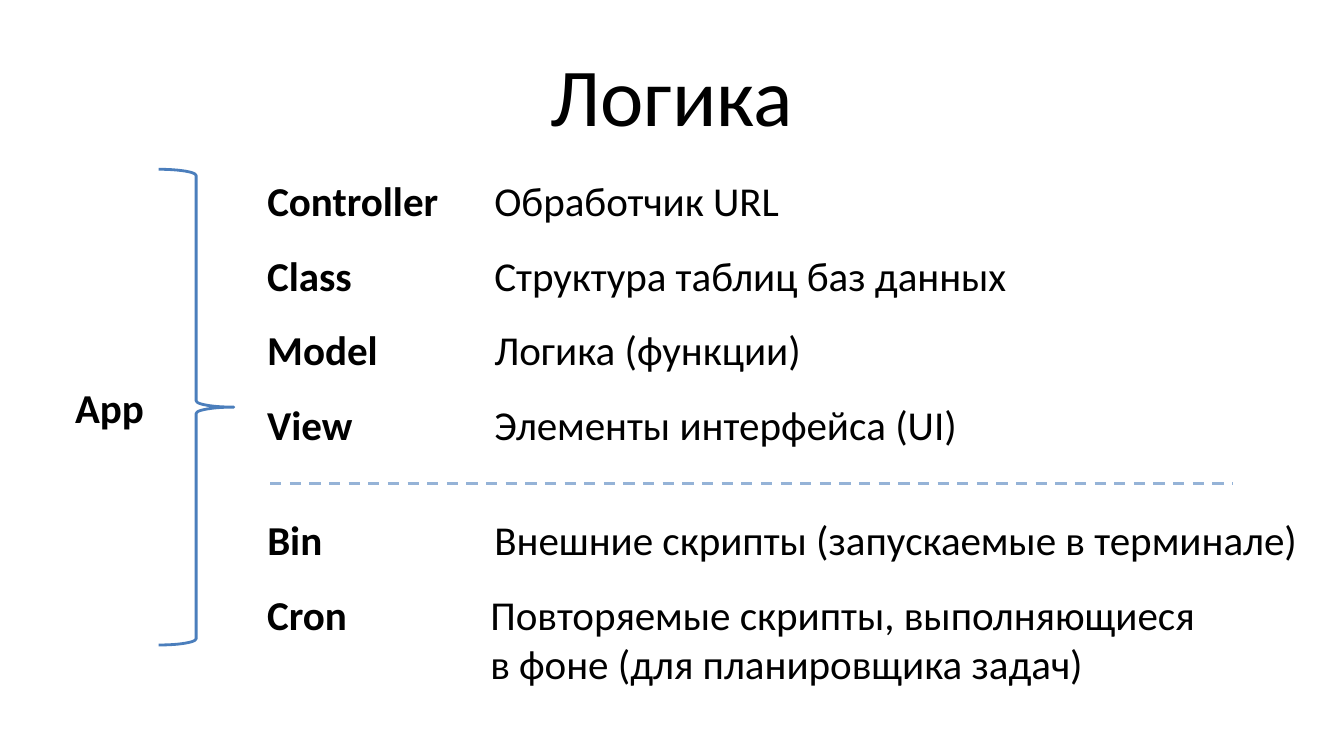
from pptx import Presentation
from pptx.dml.color import RGBColor
from pptx.enum.dml import MSO_LINE_DASH_STYLE as DASH
from pptx.enum.shapes import MSO_CONNECTOR, MSO_SHAPE
from pptx.enum.text import MSO_ANCHOR, MSO_AUTO_SIZE, PP_ALIGN
from pptx.oxml.ns import qn
from pptx.util import Inches, Pt
from lxml import etree


class SlideBuilder:
    FONT = "Calibri"
    COLORS = {"text": "000000", "brace": "4B7EBC", "divider": "95B3D7"}

    def __init__(self, slide):
        self.s = slide

    def color(self, name):
        return RGBColor.from_string(self.COLORS[name])

    def text(self, text, x, y, w, h, size=22, bold=False):
        sp = self.s.shapes.add_textbox(Inches(x), Inches(y), Inches(w), Inches(h))
        tf = sp.text_frame
        tf.word_wrap = False
        tf.auto_size = MSO_AUTO_SIZE.SHAPE_TO_FIT_TEXT
        tf.text = text
        for p in tf.paragraphs:
            for r in p.runs:
                r.font.name = self.FONT
                r.font.size = Pt(size)
                r.font.bold = bold
                r.font.color.rgb = self.color("text")
        return sp

    def title(self, text, x, y, w, h):
        tf = self.text(text, x, y, w, h, size=44).text_frame
        tf.word_wrap = True
        tf.auto_size = MSO_AUTO_SIZE.NONE
        tf.vertical_anchor = MSO_ANCHOR.MIDDLE
        tf.paragraphs[0].alignment = PP_ALIGN.CENTER

    def brace(self, x, y, w, h):
        sp = self.s.shapes.add_shape(
            MSO_SHAPE.RIGHT_BRACE, Inches(x), Inches(y), Inches(w), Inches(h))
        sp.shadow.inherit = False
        sp.fill.background()
        sp.line.color.rgb = self.color("brace")
        sp.line.width = Pt(1.5)

    def divider(self, x1, x2, y):
        line = self.s.shapes.add_connector(
            MSO_CONNECTOR.STRAIGHT, Inches(x1), Inches(y), Inches(x2), Inches(y))
        line.line.color.rgb = self.color("divider")
        line.line.width = Pt(1.5)
        line.line.dash_style = DASH.DASH
        etree.SubElement(line._element.spPr, qn("a:effectLst"))


ROW_H = 0.47
ROW_STEP = 1.66 / 3
NAME_X, NOTE_X = 1.89, 3.58
GROUPS = [
    (1.26, [
        ("Controller", 1.49, "Обработчик URL", 2.39),
        ("Class", 0.84, "Структура таблиц баз данных", 4.02),
        ("Model", 1.03, "Логика (функции)", 2.51),
        ("View", 0.84, "Элементы интерфейса (UI)", 3.65),
    ]),
    (3.78, [
        ("Bin", 0.62, "Внешние скрипты (запускаемые в терминале)", 6.22),
        ("Cron", 0.8, "Повторяемые скрипты, выполняющиеся\n"
                      "в фоне (для планировщика задач)", 5.47),
    ]),
]


def main():
    prs = Presentation()
    prs.slide_width = Inches(10)
    prs.slide_height = Inches(10 * 9 / 16)
    b = SlideBuilder(prs.slides.add_slide(prs.slide_layouts[6]))

    b.title("Логика", 0.5, 0.23, 9, 0.94)
    b.text("App", 0.46, 2.8, 0.72, ROW_H, bold=True)
    b.brace(1.18, 1.26, 0.56, 3.54)
    for top, rows in GROUPS:
        for i, (name, name_w, note, note_w) in enumerate(rows):
            y = top + i * ROW_STEP
            extra = note.count("\n")
            b.text(name, NAME_X, y, name_w, ROW_H, bold=True)
            b.text(note, NOTE_X - 0.03 * extra, y, note_w, ROW_H + 0.37 * extra)
    b.divider(2.01, 9.17, 3.6)

    prs.save("out.pptx")


if __name__ == "__main__":
    main()
